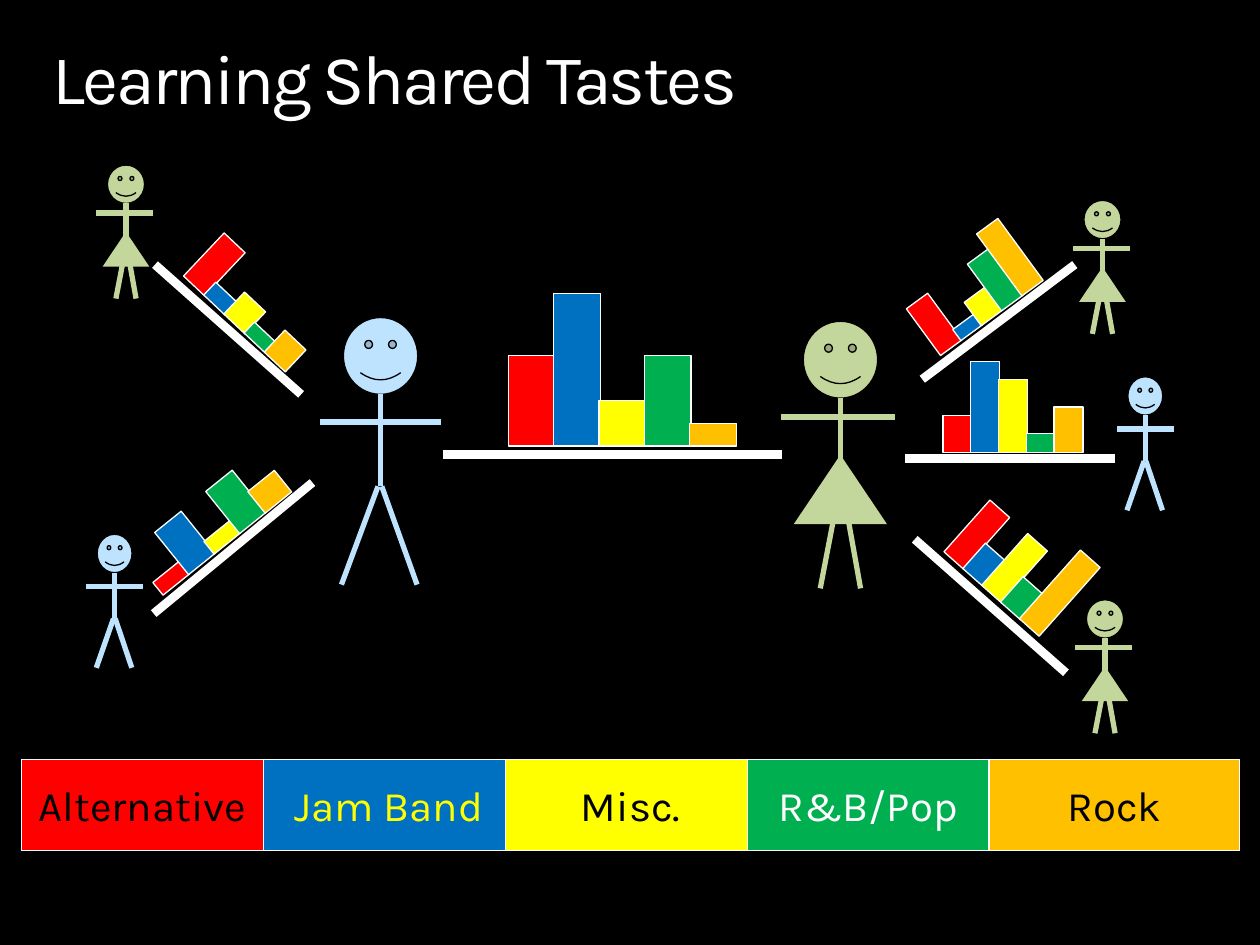
import math
import pptx
import pptx.util
import pptx.dml.color
import pptx.enum.shapes
import pptx.enum.text
import pptx.oxml.ns
import lxml.etree

Inches = pptx.util.Inches
Pt = pptx.util.Pt
RGBColor = pptx.dml.color.RGBColor
Kind = pptx.enum.shapes.MSO_SHAPE
Align = pptx.enum.text.PP_ALIGN
Anchor = pptx.enum.text.MSO_ANCHOR

BLACK = RGBColor(0x00, 0x00, 0x00)
WHITE = RGBColor(0xFF, 0xFF, 0xFF)
RED = RGBColor(0xFF, 0x00, 0x00)
BLUE = RGBColor(0x00, 0x70, 0xC0)
YELLOW = RGBColor(0xFF, 0xFF, 0x00)
GREEN = RGBColor(0x00, 0xB0, 0x50)
ORANGE = RGBColor(0xFF, 0xC0, 0x00)
SKY = RGBColor(0xBD, 0xE3, 0xFF)
SAGE = RGBColor(0xC3, 0xD6, 0x9B)
GENRES = [RED, BLUE, YELLOW, GREEN, ORANGE]

deck = pptx.Presentation()
deck.slide_width = Inches(10)
deck.slide_height = Inches(7.5)
slide = deck.slides.add_slide(deck.slide_layouts[5])
slide.background.fill.solid()
slide.background.fill.fore_color.rgb = BLACK


def add_line(x1, y1, x2, y2, color, width):
    line = slide.shapes.add_connector(
        pptx.enum.shapes.MSO_CONNECTOR.STRAIGHT,
        Inches(x1), Inches(y1), Inches(x2), Inches(y2))
    line.line.color.rgb = color
    line.line.width = Pt(width)
    lxml.etree.SubElement(line._element.spPr, pptx.oxml.ns.qn("a:effectLst"))


def add_block(kind, left, top, width, height, fill, edge=None):
    block = slide.shapes.add_shape(
        kind, Inches(left), Inches(top), Inches(width), Inches(height))
    block.shadow.inherit = False
    block.fill.solid()
    block.fill.fore_color.rgb = fill
    if edge is None:
        block.line.fill.background()
    else:
        block.line.color.rgb = edge
        block.line.width = Pt(0.75)
    return block


title = slide.shapes.title
title.left, title.top = Inches(0.42), Inches(0.35)
title.width, title.height = Inches(9.17), Inches(0.61)
frame = title.text_frame
frame.margin_left = frame.margin_right = 0
frame.margin_top = frame.margin_bottom = 0
frame.vertical_anchor = Anchor.TOP
frame.word_wrap = True
head = frame.paragraphs[0]
head.text = "Learning Shared Tastes"
head.alignment = Align.LEFT
head.line_spacing = 0.9
head.font.name = "Karla"
head.font.size = Pt(40)
head.font.color.rgb = WHITE
head.runs[0].font._element.set("spc", "-150")

boards = [
    (3.52, 3.61, 6.21, 3.61),
    (7.32, 3.01, 8.53, 2.1),
    (1.23, 2.1, 2.39, 3.13),
    (7.26, 4.28, 8.46, 5.34),
    (1.22, 4.87, 2.48, 3.83),
    (7.18, 3.64, 8.85, 3.64),
]
for board in boards:
    add_line(*board, WHITE, 5)

# Each chart: foot of the first bar, step between bars, tilt, bar heights
charts = [
    (7.55, 2.76, 0.2, -36.2, [0.46, 0.11, 0.23, 0.46, 0.61]),
    (1.54, 2.27, 0.22, 43.3, [0.47, 0.14, 0.24, 0.12, 0.24]),
    (7.57, 4.45, 0.2, 41.6, [0.55, 0.27, 0.55, 0.27, 0.73]),
    (4.22, 3.54, 0.36, 0, [0.72, 1.21, 0.36, 0.72, 0.18]),
    (7.6, 3.59, 0.22, 0, [0.29, 0.72, 0.58, 0.15, 0.36]),
    (1.4, 4.64, 0.26, -38.8, [0.13, 0.43, 0.13, 0.43, 0.22]),
]
for x, y, step, tilt, heights in charts:
    sin, cos = math.sin(math.radians(tilt)), math.cos(math.radians(tilt))
    width = step + 0.01
    for i, (height, color) in enumerate(zip(heights, GENRES)):
        mid_x = x + i * step * cos + height / 2 * sin
        mid_y = y + i * step * sin - height / 2 * cos
        bar = add_block(Kind.RECTANGLE, mid_x - width / 2, mid_y - height / 2,
                        width, height, color, WHITE)
        bar.rotation = tilt

boy = [
    (0, 0.61, 0, 1.34),
    (-0.48, 0.83, 0.48, 0.83),
    (-0.02, 1.34, -0.31, 2.12),
    (0.01, 1.34, 0.29, 2.12),
]
girl = [
    (0, 0.61, 0, 1.34),
    (0.43, 0.76, -0.47, 0.76),
    (-0.01, 1.34, -0.16, 2.12),
    (0.02, 1.34, 0.16, 2.12),
]
people = [
    (3.02, 2.52, 1, 1, boy, SKY),
    (6.67, 2.55, 1, 1, girl, SAGE),
    (1, 1.31, 0.5, 0.5, girl, SAGE),
    (8.77, 4.76, 0.5, 0.5, girl, SAGE),
    (8.75, 1.59, 0.5, 0.5, girl, SAGE),
    (9.09, 2.99, 0.47, 0.5, boy, SKY),
    (0.91, 4.24, 0.47, 0.5, boy, SKY),
]
for x, y, wide, tall, limbs, color in people:
    add_block(Kind.SMILEY_FACE, x - 0.295 * wide, y,
              0.59 * wide, 0.61 * tall, color, BLACK)
    for x1, y1, x2, y2 in limbs:
        add_line(x + x1 * wide, y + y1 * tall,
                 x + x2 * wide, y + y2 * tall, color, 3)
    if limbs is girl:
        add_block(Kind.ISOSCELES_TRIANGLE, x - 0.37 * wide, y + 1.06 * tall,
                  0.74 * wide, 0.55 * tall, color)

labels = [
    ("Alternative", 1.92, BLACK),
    ("Jam Band", 1.99, YELLOW),
    ("Misc.", 1.99, BLACK),
    ("R&B/Pop", 1.92, WHITE),
    ("Rock", 1.99, BLACK),
]
for i, (label, width, ink) in enumerate(labels):
    box = add_block(Kind.RECTANGLE, 0.17 + 1.92 * i, 6.03, width, 0.72,
                    GENRES[i], WHITE)
    box.text_frame.vertical_anchor = Anchor.MIDDLE
    para = box.text_frame.paragraphs[0]
    para.text = label
    para.alignment = Align.CENTER
    para.font.name = "Karla"
    para.font.size = Pt(24)
    para.font.color.rgb = ink

deck.save("out.pptx")
